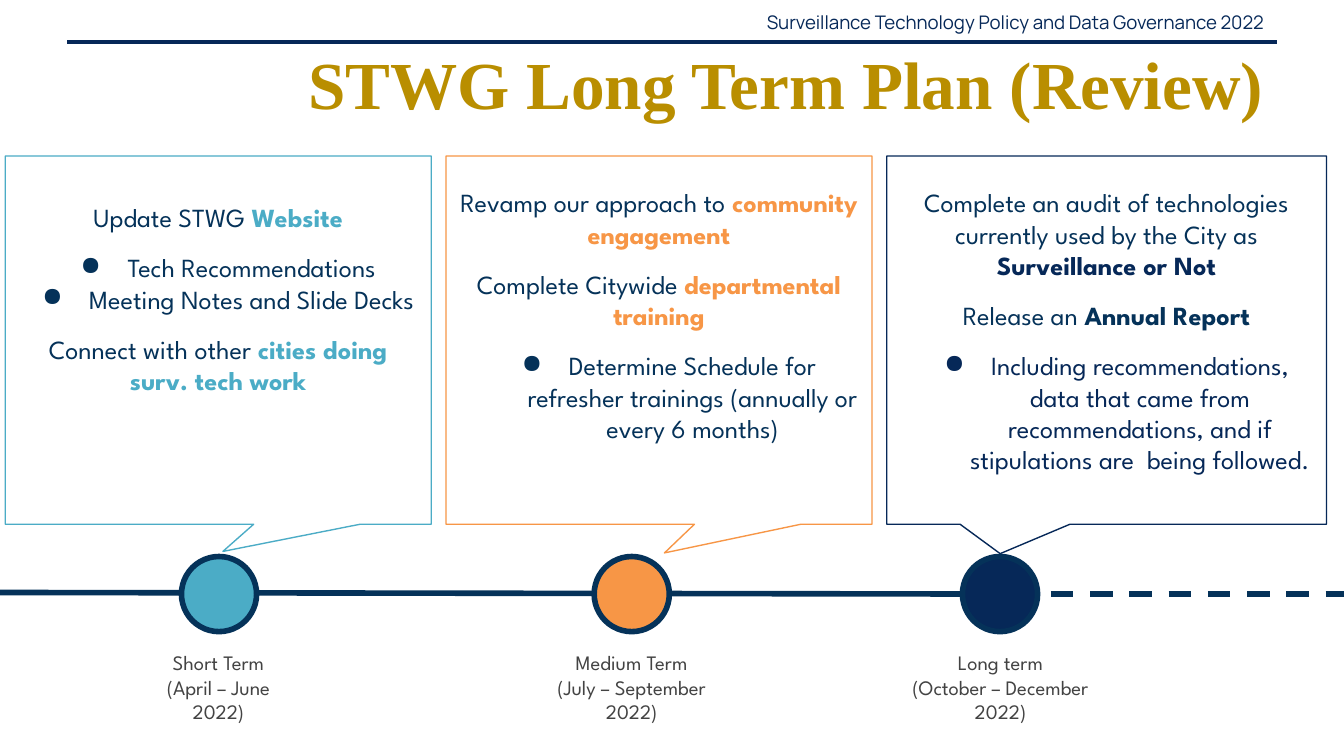
from lxml import etree
from pptx import Presentation
from pptx.dml.color import RGBColor
from pptx.enum import dml, shapes, text
from pptx.oxml.ns import qn
from pptx.util import Cm, Pt

COLORS = {"navy": "062858", "ink": "053259", "teal": "4BACC6",
          "orange": "F79646", "gold": "B98E00", "gray": "434343"}
RGB = {name: RGBColor.from_string(value) for name, value in COLORS.items()}
BODY_FONT = "League Spartan"

# Each paragraph: (is bullet, space before, [(words, colour, bold), ...])
STAGES = [
    dict(color="teal", left=0.1, width=8.05, tip=(0.011, 0.574),
         text_top=3.56, text_height=5.77, circle_left=3.43,
         label_left=2.49, label_width=3.28,
         label=["Short Term", "(April – June 2022)"],
         plan=[(False, 0, [("Update STWG ", "ink", False), ("Website", "teal", True)]),
               (True, 10, [("Tech Recommendations", "ink", False)]),
               (True, 0, [("Meeting Notes and Slide Decks", "ink", False)]),
               (False, 10, [("Connect with other ", "ink", False),
                            ("cities doing surv. tech work", "teal", True)])]),
    dict(color="orange", left=8.43, width=8.05, tip=(0.013, 0.578),
         text_top=3.28, text_height=5.41, circle_left=11.23,
         label_left=10.06, label_width=3.76,
         label=["Medium Term", "(July – September 2022)"],
         plan=[(False, 0, [("Revamp our approach to ", "ink", False),
                           ("community engagement", "orange", True)]),
               (False, 10, [("Complete Citywide ", "ink", False),
                            ("departmental training", "orange", True)]),
               (True, 10, [("Determine Schedule for refresher trainings "
                            "(annually or every 6 months)", "ink", False)])]),
    dict(color="navy", left=16.76, width=8.31, tip=(-0.242, 0.58),
         text_top=3.28, text_height=6.6, circle_left=18.19,
         label_left=16.74, label_width=4.34,
         label=["Long term", "(October – December 2022)"],
         plan=[(False, 0, [("Complete an audit of technologies currently used by the City as",
                            "ink", False), (" Surveillance or Not", "navy", True)]),
               (False, 10, [("Release an ", "ink", False), ("Annual Report", "ink", True)]),
               (True, 10, [("Including recommendations, data that came from recommendations, "
                            "and if stipulations are  being followed.", "navy", False)])]),
]

prs = Presentation()
prs.slide_width, prs.slide_height = Cm(25.4), Cm(14.29)
slide = prs.slides.add_slide(prs.slide_layouts[5])


def add_line(x1, y1, x2, y2, color, weight):
    line = slide.shapes.add_connector(shapes.MSO_CONNECTOR.STRAIGHT,
                                      Cm(x1), Cm(y1), Cm(x2), Cm(y2))
    line.line.color.rgb = RGB[color]
    line.line.width = Pt(weight)
    etree.SubElement(line._element.spPr, qn("a:effectLst"))
    return line


def add_text_frame(left, top, width, height, margin_y):
    frame = slide.shapes.add_textbox(Cm(left), Cm(top), Cm(width), Cm(height)).text_frame
    frame.word_wrap = True
    frame.margin_left = frame.margin_right = Cm(0.25)
    frame.margin_top = frame.margin_bottom = Cm(margin_y)
    return frame


# Title and running header
title = slide.shapes.title
title.left, title.top, title.width, title.height = Cm(0.64), Cm(0.74), Cm(23.5), Cm(1.63)
title.text_frame.text = "STWG Long Term Plan (Review)"
title.text_frame.vertical_anchor = text.MSO_ANCHOR.MIDDLE
heading = title.text_frame.paragraphs[0]
heading.alignment = text.PP_ALIGN.RIGHT
heading.font.name, heading.font.size, heading.font.bold = "Times New Roman", Pt(36), True
heading.font.color.rgb = RGB["gold"]

add_line(1.27, 0.79, 24.13, 0.79, "navy", 2.25)
header = add_text_frame(13.23, 0.03, 10.9, 0.76, 0.13)
header.vertical_anchor = text.MSO_ANCHOR.MIDDLE
running = header.paragraphs[0]
running.text = "Surveillance Technology Policy and Data Governance 2022"
running.alignment = text.PP_ALIGN.RIGHT
running.font.name, running.font.size = "Manrope", Pt(10)
running.font.color.rgb = RGB["navy"]

# Timeline
future = add_line(19.86, 11.23, 25.43, 11.23, "ink", 3)
future.line.dash_style = dml.MSO_LINE.DASH
add_line(-0.03, 11.2, 19.61, 11.23, "ink", 3)

for stage in STAGES:
    callout = slide.shapes.add_shape(shapes.MSO_SHAPE.RECTANGULAR_CALLOUT, Cm(stage["left"]),
                                     Cm(2.95), Cm(stage["width"]), Cm(6.96))
    callout.adjustments[0], callout.adjustments[1] = stage["tip"]
    callout.shadow.inherit = False
    callout.fill.background()
    callout.line.color.rgb = RGB[stage["color"]]
    callout.line.width = Pt(0.75)

    milestone = slide.shapes.add_shape(shapes.MSO_SHAPE.OVAL, Cm(stage["circle_left"]),
                                       Cm(10.52), Cm(1.42), Cm(1.42))
    milestone.shadow.inherit = False
    milestone.fill.solid()
    milestone.fill.fore_color.rgb = RGB[stage["color"]]
    milestone.line.color.rgb = RGB["ink"]
    milestone.line.width = Pt(3)

    label = add_text_frame(stage["label_left"], 12.04, stage["label_width"], 1.93, 0.25)
    label.text = "\n".join(stage["label"])
    for period in label.paragraphs:
        period.alignment = text.PP_ALIGN.CENTER
        period.font.name, period.font.size = BODY_FONT, Pt(11)
        period.font.color.rgb = RGB["gray"]

    plan = add_text_frame(stage["left"], stage["text_top"], stage["width"],
                          stage["text_height"], 0.25)
    for i, (is_bullet, space, pieces) in enumerate(stage["plan"]):
        item = plan.add_paragraph() if i else plan.paragraphs[0]
        item.alignment = text.PP_ALIGN.CENTER
        item.space_before = Pt(space)
        item.font.name, item.font.size = BODY_FONT, Pt(14)
        for words, color, bold in pieces:
            run = item.add_run()
            run.text = words
            run.font.bold = bold
            run.font.color.rgb = RGB[color]
        if is_bullet:
            props = item._p.get_or_add_pPr()
            props.set("marL", str(Cm(1.27)))
            props.set("indent", str(Cm(-0.89)))
            bullet = etree.Element(qn("a:buChar"), char="●")
            bullet_color = etree.Element(qn("a:buClr"))
            etree.SubElement(bullet_color, qn("a:srgbClr"), val=COLORS[pieces[0][1]])
            spacing = props.find(qn("a:spcBef"))
            spacing.addnext(bullet_color)
            bullet_color.addnext(bullet)

prs.save("out.pptx")
